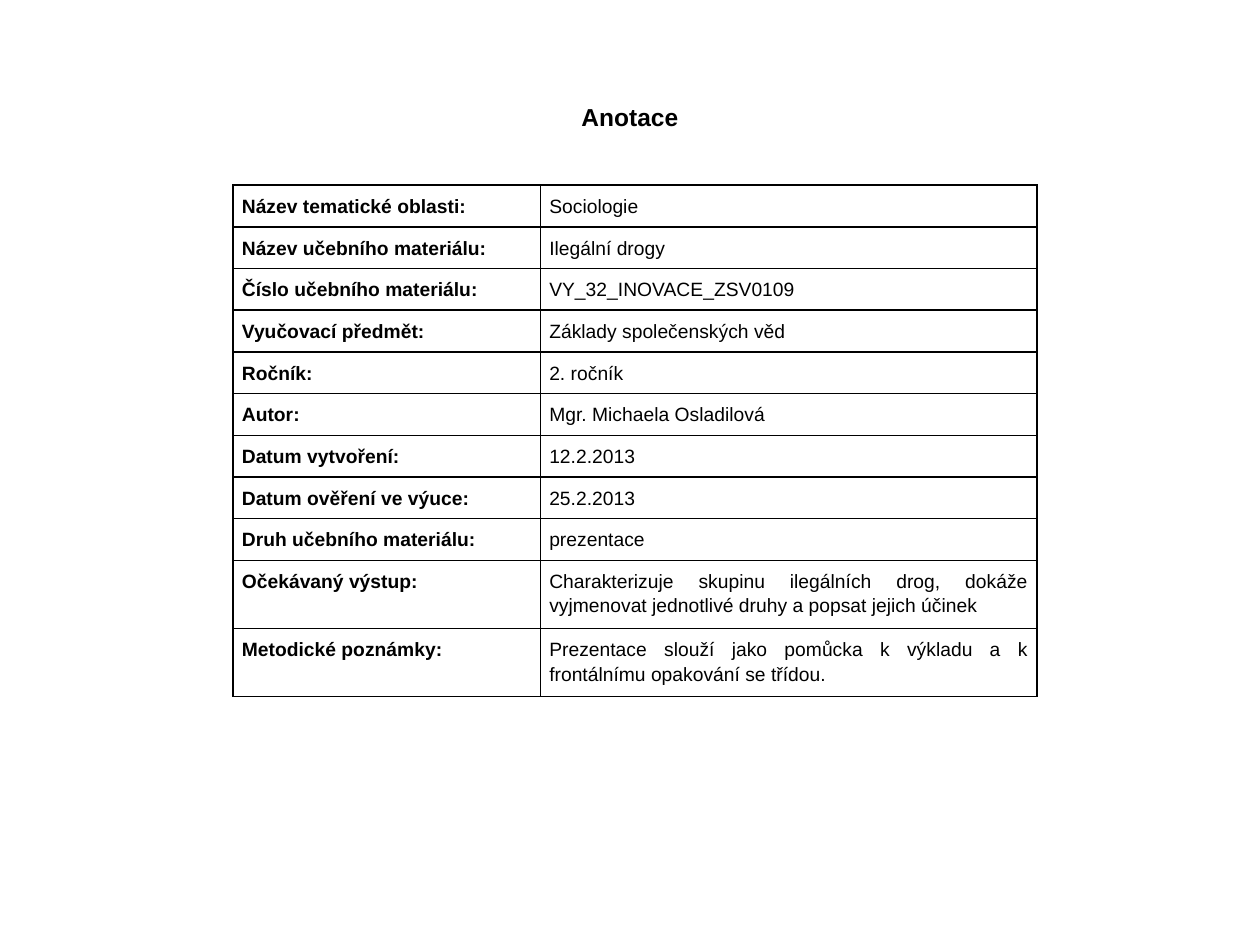
from dataclasses import dataclass

from lxml.etree import SubElement
from pptx import Presentation
from pptx.dml.color import RGBColor
from pptx.enum.text import MSO_ANCHOR as Anchor, PP_ALIGN as Align
from pptx.oxml.ns import qn
from pptx.util import Inches, Pt


@dataclass(frozen=True)
class Theme:
    font: str = "Arial"
    ink: str = "000000"
    title_size: int = 14
    table_size: int = 11
    line_spacing: float = 1.15
    border: float = 1


class SlideBuilder:
    """Draws on one slide; lengths are units of a 100 by 75 grid."""

    COLUMNS, ROWS = 100, 75

    def __init__(self, deck, theme):
        self.theme = theme
        self.unit_x = deck.slide_width / self.COLUMNS
        self.unit_y = deck.slide_height / self.ROWS
        self.page = deck.slides.add_slide(deck.slide_layouts[6])

    def across(self, columns):
        return round(columns * self.unit_x)

    def down(self, rows):
        return round(rows * self.unit_y)

    def style(self, para, size, bold, align):
        para.alignment = align
        font = para.font
        font.name, font.size, font.bold = self.theme.font, Pt(size), bold
        font.color.rgb = RGBColor.from_string(self.theme.ink)

    def title(self, text, left, top, width, height):
        box = self.page.shapes.add_textbox(
            self.across(left), self.down(top), self.across(width), self.down(height))
        frame = box.text_frame
        frame.word_wrap = True
        frame.vertical_anchor = Anchor.MIDDLE
        frame.text = text
        self.style(frame.paragraphs[0], self.theme.title_size, True, Align.CENTER)

    def table(self, records, left, top, widths, heights):
        table = self.page.shapes.add_table(
            len(records), len(widths), self.across(left), self.down(top),
            self.across(sum(widths)), self.down(sum(heights))).table
        table.first_row = table.horz_banding = False
        for column, width in zip(table.columns, widths):
            column.width = self.across(width)
        for row, height, (label, value, label_align) in zip(table.rows, heights, records):
            row.height = self.down(height)
            self.fill_cell(row.cells[0], label, True, label_align)
            self.fill_cell(row.cells[1], value, False, Align.JUSTIFY)

    def fill_cell(self, cell, text, bold, align):
        cell.margin_left = cell.margin_right = Inches(0.07)
        cell.margin_top = cell.margin_bottom = Inches(0.06)
        self.outline(cell)
        cell.fill.background()
        cell.text = text
        para = cell.text_frame.paragraphs[0]
        para.line_spacing = self.theme.line_spacing
        self.style(para, self.theme.table_size, bold, align)

    def outline(self, cell):
        properties = cell._tc.get_or_add_tcPr()
        for side in ("a:lnL", "a:lnR", "a:lnT", "a:lnB"):
            line = SubElement(properties, qn(side), w=str(Pt(self.theme.border)))
            fill = SubElement(line, qn("a:solidFill"))
            SubElement(fill, qn("a:srgbClr"), val=self.theme.ink)


RECORDS = [
    ("Název tematické oblasti:", "Sociologie", Align.LEFT),
    ("Název učebního materiálu:", "Ilegální drogy", Align.LEFT),
    ("Číslo učebního materiálu:", "VY_32_INOVACE_ZSV0109", Align.LEFT),
    ("Vyučovací předmět:", "Základy společenských věd", Align.LEFT),
    ("Ročník:", "2. ročník", Align.LEFT),
    ("Autor:", "Mgr. Michaela Osladilová", Align.LEFT),
    ("Datum vytvoření:", "12.2.2013", Align.LEFT),
    ("Datum ověření ve výuce:", "25.2.2013", Align.LEFT),
    ("Druh učebního materiálu:", "prezentace", Align.JUSTIFY),
    ("Očekávaný výstup:",
     "Charakterizuje skupinu ilegálních drog, dokáže vyjmenovat jednotlivé druhy "
     "a popsat jejich účinek", Align.JUSTIFY),
    ("Metodické poznámky:",
     "Prezentace slouží jako pomůcka k výkladu a k frontálnímu opakování se třídou.",
     Align.JUSTIFY),
]
ONE_LINE, TWO_LINES = 3.28, 5.4


def main():
    deck = Presentation()
    deck.slide_width, deck.slide_height = Inches(10), Inches(7.5)
    builder = SlideBuilder(deck, Theme())
    builder.title("Anotace", left=0, top=6.8, width=100, height=5)
    builder.table(RECORDS, left=18.5, top=14.7, widths=[24.4, 39.4],
                  heights=[ONE_LINE] * 9 + [TWO_LINES] * 2)
    deck.save("out.pptx")


if __name__ == "__main__":
    main()
